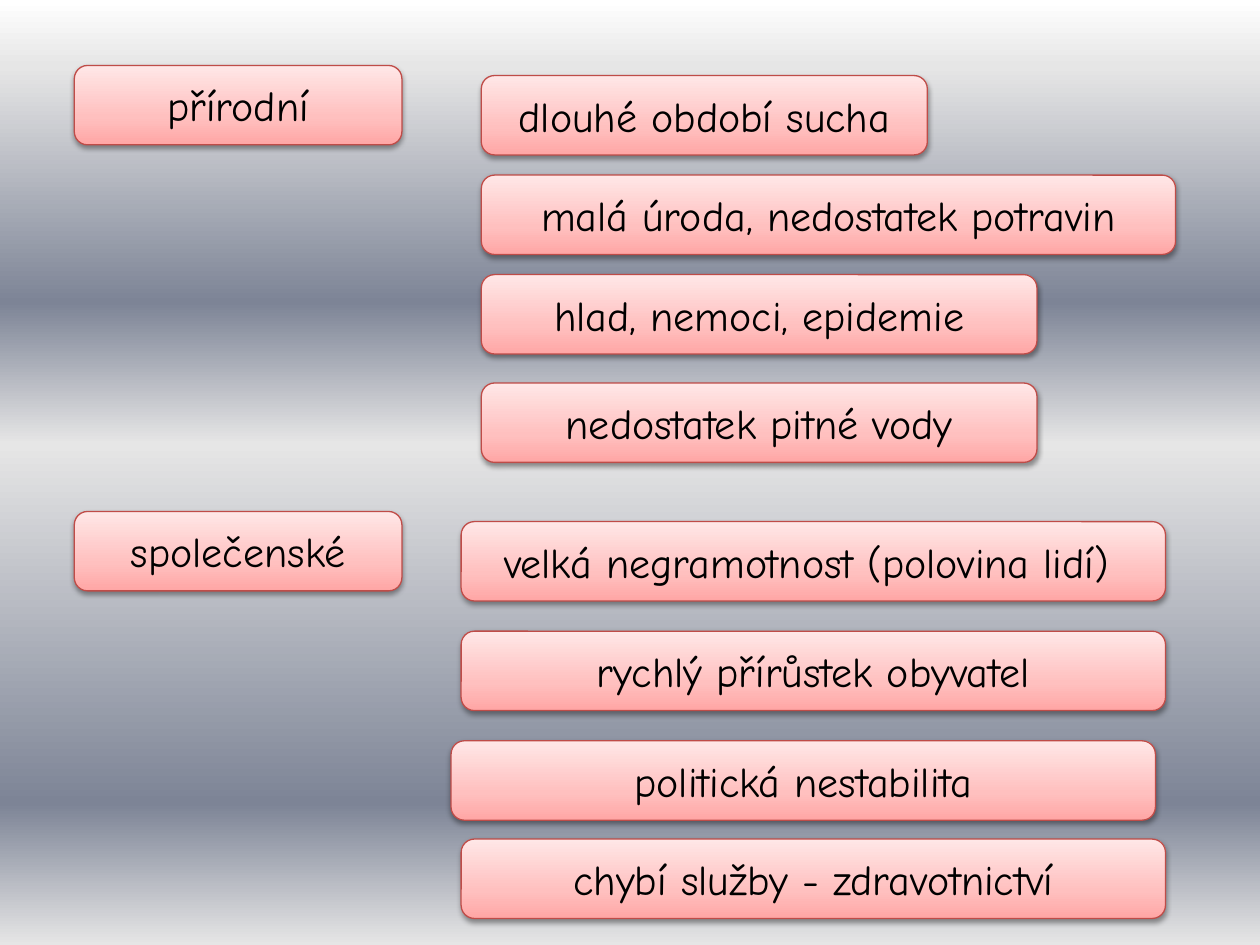
from typing import NamedTuple

from lxml.etree import SubElement
from pptx import Presentation
from pptx.dml.color import RGBColor
from pptx.enum.shapes import MSO_SHAPE as Shape
from pptx.enum.text import MSO_ANCHOR as Anchor, PP_ALIGN as Align
from pptx.oxml.ns import qn
from pptx.util import Inches, Pt

BOX_H = 0.63
FONT = {"name": "Comic Neue", "size": Pt(24)}
BOX_STOPS = [(0, "FFA6A5"), (35, "FFC0BF"), (100, "FFE7E7")]
BACK_STOPS = [(0, "FFFFFF"), (7, "E6E6E6"), (32, "7D8496"),
              (47, "E6E6E6"), (85, "7D8496"), (100, "E6E6E6")]


class Box(NamedTuple):
    text: str
    left: float
    top: float
    width: float


# Natural causes, then social causes, each after its heading
BOXES = [
    Box("přírodní", 0.59, 0.52, 2.6),
    Box("dlouhé období sucha", 3.82, 0.6, 3.54),
    Box("malá úroda, nedostatek potravin", 3.82, 1.39, 5.51),
    Box("hlad, nemoci, epidemie", 3.82, 2.18, 4.41),
    Box("nedostatek pitné vody", 3.82, 3.04, 4.41),
    Box("společenské", 0.59, 4.06, 2.6),
    Box("velká negramotnost (polovina lidí) ", 3.66, 4.14, 5.59),
    Box("rychlý přírůstek obyvatel", 3.66, 5.01, 5.59),
    Box("politická nestabilita", 3.58, 5.88, 5.59),
    Box("chybí služby - zdravotnictví", 3.66, 6.66, 5.59),
]


def rgb(value: str) -> RGBColor:
    return RGBColor.from_string(value)


def set_gradient(owner, fill, stops: list, angle: int) -> None:
    """Fill with colour stops; the angle runs counter-clockwise."""
    fill.gradient()
    fill.gradient_angle = angle
    gs_list = owner.element.find(".//" + qn("a:gsLst"))
    gs_list.clear()
    for pos, color in stops:
        gs = SubElement(gs_list, qn("a:gs"), pos=str(pos * 1000))
        SubElement(gs, qn("a:srgbClr"), val=color)


def add_shadow(sp) -> None:
    sp.shadow.inherit = False
    effects = sp.element.spPr.find(qn("a:effectLst"))
    shadow = SubElement(effects, qn("a:outerShdw"), blurRad=str(Pt(3.1)),
                        dist=str(Pt(1.6)), dir="5400000", rotWithShape="0")
    color = SubElement(shadow, qn("a:srgbClr"), val="000000")
    SubElement(color, qn("a:alpha"), val="38000")


def add_box(s, box: Box) -> None:
    sp = s.shapes.add_shape(Shape.ROUNDED_RECTANGLE, Inches(box.left),
                            Inches(box.top), Inches(box.width), Inches(BOX_H))
    set_gradient(sp, sp.fill, BOX_STOPS, 90)
    sp.line.color.rgb = rgb("BF4C48")
    sp.line.width = Pt(0.75)
    add_shadow(sp)

    tf = sp.text_frame
    tf.word_wrap = True
    tf.vertical_anchor = Anchor.MIDDLE
    p = tf.paragraphs[0]
    p.alignment = Align.CENTER
    r = p.add_run()
    r.text = box.text
    for key, value in FONT.items():
        setattr(r.font, key, value)
    r.font.color.rgb = rgb("000000")


def main() -> None:
    prs = Presentation()
    prs.slide_width, prs.slide_height = Inches(10), Inches(7.5)
    s = prs.slides.add_slide(prs.slide_layouts[6])
    set_gradient(s, s.background.fill, BACK_STOPS, 270)
    for box in BOXES:
        add_box(s, box)
    prs.save("out.pptx")


if __name__ == "__main__":
    main()
